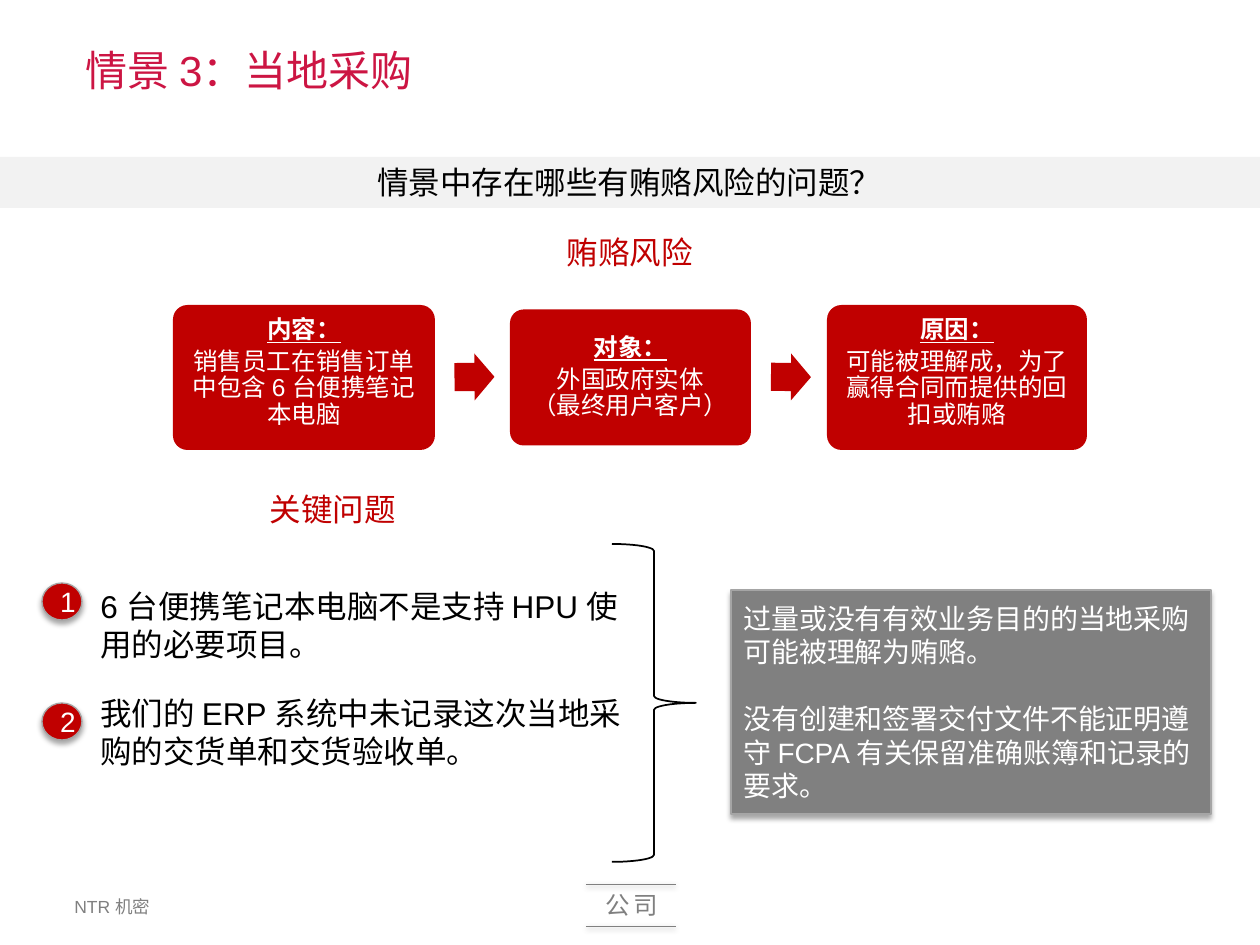
from dataclasses import dataclass

from lxml import etree
from pptx import Presentation
from pptx import util as u
from pptx.dml.color import RGBColor
from pptx.enum import shapes, text
from pptx.oxml.ns import qn

SCALE = 914400 / 126
KIND = shapes.MSO_SHAPE
ALIGN = text.PP_ALIGN
ANCHOR = text.MSO_ANCHOR


@dataclass(frozen=True)
class Theme:
    font: str = "Arial"
    title: str = "CC1543"
    red: str = "C00000"
    gray: str = "808080"
    edge: str = "A5A5A5"
    band: str = "F2F2F2"
    black: str = "000000"
    white: str = "FFFFFF"
    title_size: int = 24
    body_size: int = 18
    note_size: int = 16
    card_size: int = 14
    footer_size: int = 10


THEME = Theme()


def px(value):
    return u.Emu(round(value * SCALE))


def place(box):
    return [px(value) for value in box]


def color(value):
    return RGBColor.from_string(value)


def write(shape, lines, size, ink, align=ALIGN.LEFT, anchor=ANCHOR.TOP, margin=None):
    frame = shape.text_frame
    frame.word_wrap = True
    frame.vertical_anchor = anchor
    if margin is not None:
        frame.margin_left = frame.margin_right = px(margin)
        frame.margin_top = frame.margin_bottom = px(margin)
    for index, line in enumerate(lines):
        paragraph = frame.add_paragraph() if index else frame.paragraphs[0]
        paragraph.text = line
        paragraph.alignment = align
        for run in paragraph.runs:
            run.font.name = THEME.font
            run.font.size = u.Pt(size)
            run.font.color.rgb = color(ink)
    return frame.paragraphs


def add_text(slide, box, lines, size, ink, **layout):
    label = slide.shapes.add_textbox(*place(box))
    return write(label, lines, size, ink, **layout)


def add_block(slide, kind, box, fill, edge=None):
    block = slide.shapes.add_shape(kind, *place(box))
    block.shadow.inherit = False
    block.fill.solid()
    block.fill.fore_color.rgb = color(fill)
    if edge:
        block.line.color.rgb = color(edge)
        block.line.width = u.Pt(0.75)
        cast_shadow(block.element.spPr.find(qn("a:effectLst")), 1.8, 35)
    else:
        block.line.fill.background()
    return block


def cast_shadow(effects, distance, opacity):
    shadow = etree.SubElement(
        effects, qn("a:outerShdw"), blurRad=str(u.Pt(3.1)),
        dist=str(u.Pt(distance)), dir="5400000", rotWithShape="0")
    tint = etree.SubElement(shadow, qn("a:srgbClr"), val=THEME.black)
    etree.SubElement(tint, qn("a:alpha"), val=str(opacity * 1000))


def footer(slide, box):
    left, top, width, height = box
    add_text(slide, (left, top + 6, 205, 34), ["NTR 机密"],
             THEME.footer_size, THEME.gray, anchor=ANCHOR.MIDDLE)
    company = add_text(slide, (left + 519, top, 102, 72), ["公司"],
                       THEME.card_size, THEME.gray, align=ALIGN.CENTER)
    company[0].runs[0].font._element.set("spc", "200")
    for y in (top, top + height):
        rule = slide.shapes.add_connector(
            shapes.MSO_CONNECTOR.STRAIGHT,
            *place((left + 524, y, left + 614, y)))
        rule.line.color.rgb = color(THEME.gray)
        rule.line.width = u.Pt(0.5)
        effects = etree.SubElement(rule.element.spPr, qn("a:effectLst"))
        cast_shadow(effects, 1.6, 38)


def heading(slide, box):
    title = slide.shapes.title
    title.left, title.top, title.width, title.height = place(box)
    write(title, ["情景 3：当地采购"], THEME.title_size, THEME.title, anchor=ANCHOR.MIDDLE)


def question_band(slide, box):
    band = add_block(slide, KIND.RECTANGLE, box, THEME.band)
    write(band, ["情景中存在哪些有贿赂风险的问题？"], THEME.body_size,
          THEME.black, align=ALIGN.CENTER)


def section_label(slide, box, label):
    add_text(slide, box, [label], THEME.body_size, THEME.red, align=ALIGN.CENTER)


def risk_flow(slide, box):
    left, top, width, height = box
    middle = top + height / 2
    cards = [
        (0, 262, 145, ANCHOR.TOP, "内容：", "销售员工在销售订单中包含 6 台便携笔记本电脑"),
        (337, 241, 136, ANCHOR.MIDDLE, "对象：", "外国政府实体\v（最终用户客户）"),
        (654, 260, 145, ANCHOR.TOP, "原因：", "可能被理解成，为了赢得合同而提供的回扣或贿赂"),
    ]
    for x, card_width, card_height, anchor, topic, detail in cards:
        card = add_block(
            slide, KIND.ROUNDED_RECTANGLE,
            (left + x, middle - card_height / 2, card_width, card_height), THEME.red)
        card.adjustments[0] = 0.1
        topic_line, detail_line = write(
            card, [topic, detail], THEME.card_size, THEME.white,
            align=ALIGN.CENTER, anchor=anchor, margin=8)
        topic_line.line_spacing = detail_line.line_spacing = 0.9
        detail_line.space_before = u.Pt(3)
        topic_line.runs[0].font.bold = True
        topic_line.runs[0].font.underline = True
    for before, after, tilt in zip(cards, cards[1:], (359.6, 0.4)):
        gap_center = (before[0] + before[1] + after[0]) / 2
        arrow = add_block(slide, KIND.RIGHT_ARROW,
                          (left + gap_center - 18, middle - 24, 40, 47), THEME.red)
        arrow.adjustments[0] = 0.6
        arrow.adjustments[1] = 0.5
        arrow.rotation = tilt


def key_questions(slide, box):
    left, top, width, height = box
    questions = ["6 台便携笔记本电脑不是支持 HPU 使用的必要项目。",
                 "我们的 ERP 系统中未记录这次当地采购的交货单和交货验收单。"]
    paragraphs = add_text(slide, (left + 46, top, width - 46, height),
                          questions, THEME.body_size, THEME.black)
    for index, paragraph in enumerate(paragraphs):
        paragraph.space_before = u.Pt(12 if index else 0)
        paragraph.space_after = u.Pt(6)
        badge = add_block(slide, KIND.OVAL, (left, top + 2 + 120 * index, 40, 37),
                          THEME.red, THEME.edge)
        write(badge, [str(index + 1)], THEME.note_size, THEME.white,
              align=ALIGN.CENTER, anchor=ANCHOR.MIDDLE)


def brace(slide, box):
    bracket = slide.shapes.add_shape(KIND.RIGHT_BRACE, *place(box))
    bracket.shadow.inherit = False
    bracket.fill.background()
    bracket.line.color.rgb = color(THEME.black)
    bracket.line.width = u.Pt(1)


def conclusion(slide, box):
    panel = add_block(slide, KIND.RECTANGLE, box, THEME.gray, THEME.edge)
    findings = ["过量或没有有效业务目的的当地采购可能被理解为贿赂。",
                "没有创建和签署交付文件不能证明遵守 FCPA 有关保留准确账簿和记录的要求。"]
    paragraphs = write(panel, findings, THEME.note_size, THEME.white, anchor=ANCHOR.MIDDLE)
    paragraphs[1].space_before = u.Pt(19)


def main():
    deck = Presentation()
    deck.slide_width, deck.slide_height = px(1260), px(945)
    slide = deck.slides.add_slide(deck.slide_layouts[5])
    footer(slide, (62, 884, 621, 42))
    heading(slide, (73, 10, 939, 120))
    question_band(slide, (-1, 157, 1261, 51))
    section_label(slide, (354, 227, 552, 50), "贿赂风险")
    risk_flow(slide, (173, 305, 914, 145))
    section_label(slide, (57, 484, 552, 50), "关键问题")
    key_questions(slide, (42, 581, 614, 398))
    brace(slide, (612, 544, 84, 318))
    conclusion(slide, (731, 590, 480, 224))
    deck.save("out.pptx")


if __name__ == "__main__":
    main()
